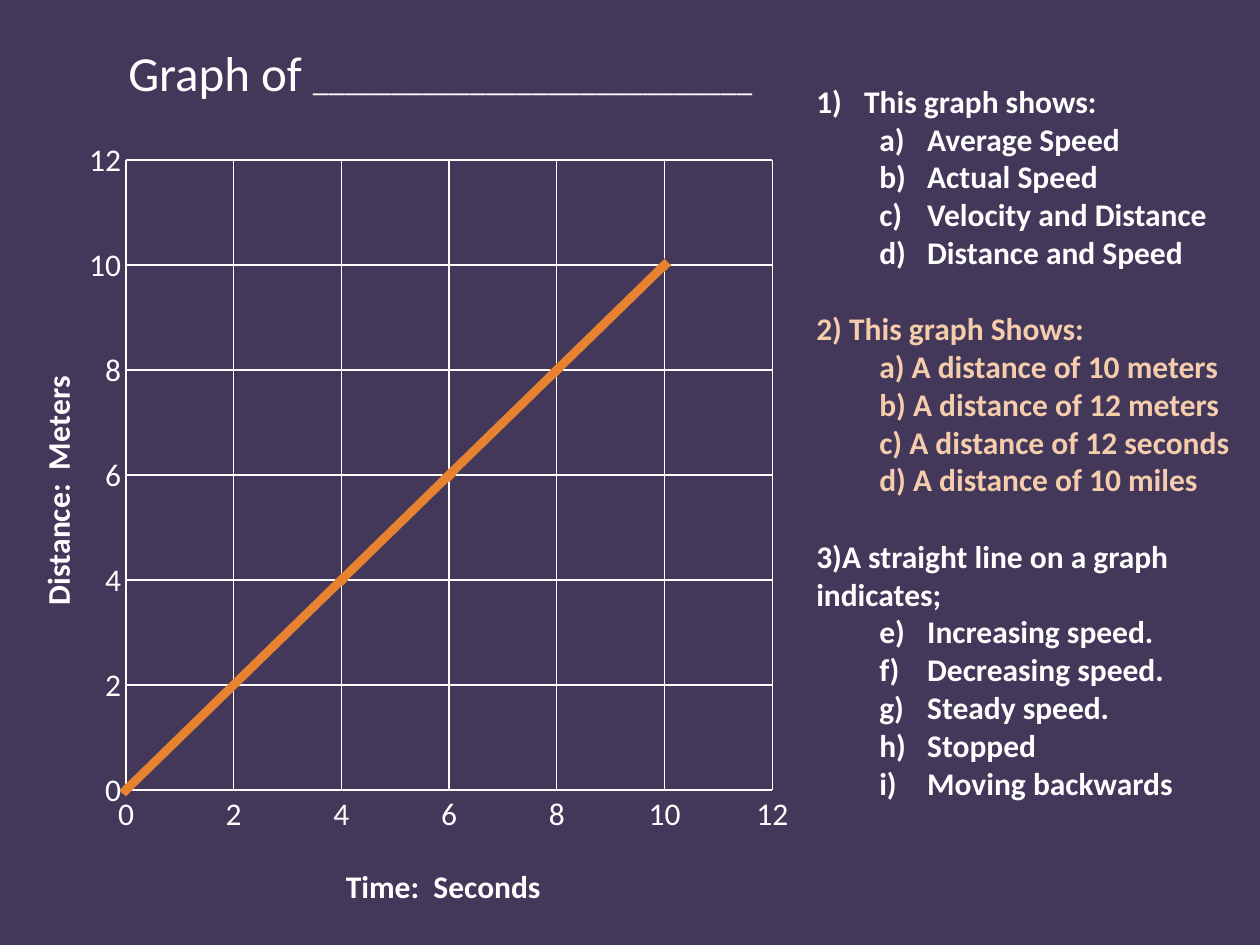
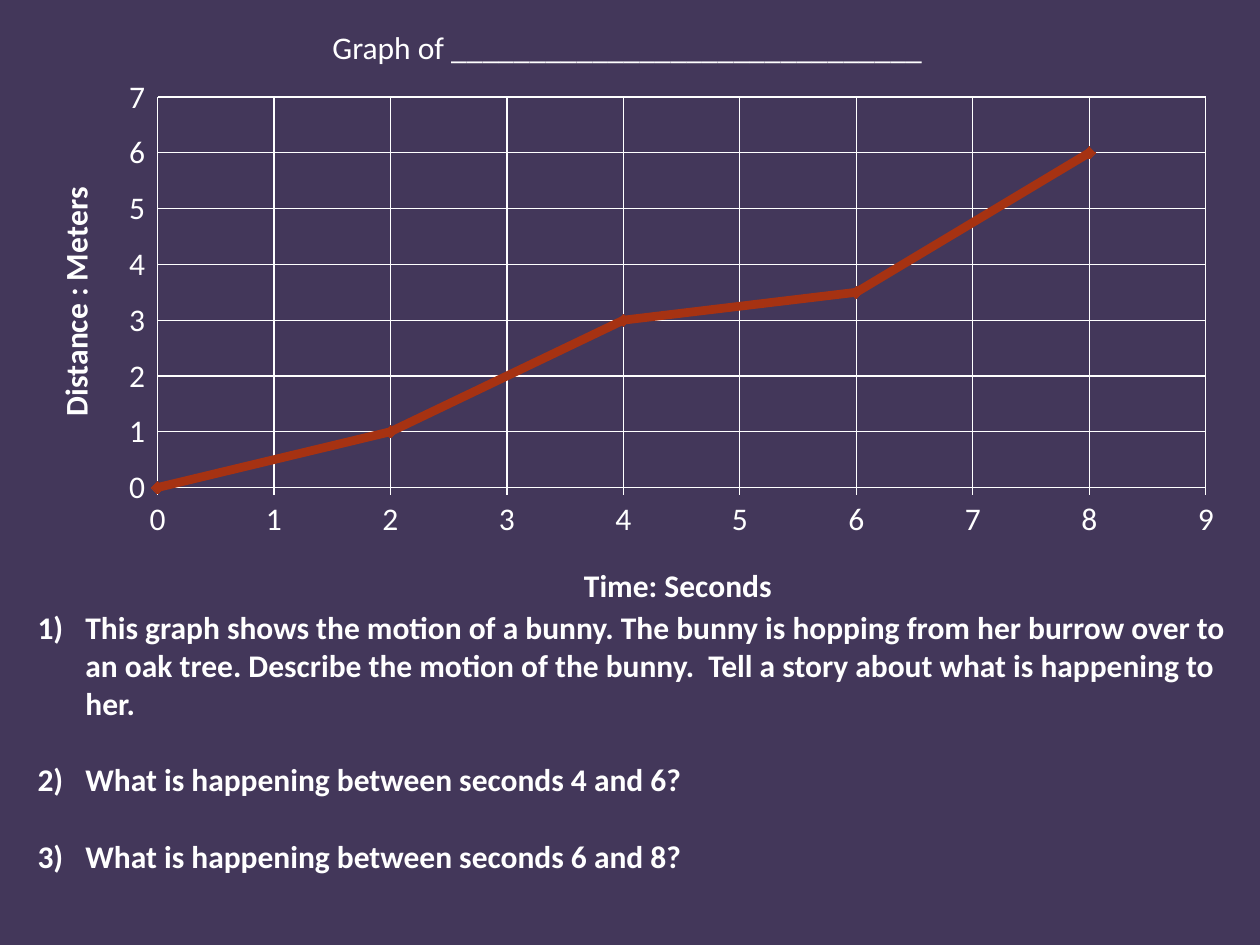
from lxml import etree
from pptx import Presentation
from pptx.chart.data import XyChartData
from pptx.dml.color import RGBColor
from pptx.enum.chart import XL_CHART_TYPE, XL_MARKER_STYLE, XL_TICK_MARK
from pptx.oxml.ns import qn
from pptx.util import Inches, Pt

BACKDROP = RGBColor(0x43, 0x37, 0x5A)
WHITE = RGBColor(0xFF, 0xFF, 0xFF)
ORANGE = RGBColor(0xE6, 0x82, 0x30)
PEACH = RGBColor(0xF5, 0xCD, 0xAC)
RUST = RGBColor(0xA6, 0x32, 0x12)
LINES = XL_CHART_TYPE.XY_SCATTER_LINES
SMOOTH = XL_CHART_TYPE.XY_SCATTER_SMOOTH
DIAMOND = XL_MARKER_STYLE.DIAMOND
TICK_NONE = XL_TICK_MARK.NONE
TICK_OUT = XL_TICK_MARK.OUTSIDE

FONT = "Calibri"
BODY = 18
LINE_GAP = 22
HANG = 0.38
STEP = 0.5


def new_slide(prs):
    s = prs.slides.add_slide(prs.slide_layouts[6])
    s.background.fill.solid()
    s.background.fill.fore_color.rgb = BACKDROP
    return s


def style_font(font, size=BODY, color=WHITE, bold=False):
    font.name = FONT
    font.size = Pt(size)
    font.bold = bold
    font.color.rgb = color


def add_box(s, box, wrap):
    tf = s.shapes.add_textbox(*map(Inches, box)).text_frame
    tf.word_wrap = wrap
    return tf


def add_heading(s, box, label, blanks, size):
    p = add_box(s, box, False).paragraphs[0]
    for text, points in ((label, size), ("_" * blanks, BODY)):
        r = p.add_run()
        r.text = text
        style_font(r.font, points)


def indent(p, level, scheme=None, start=1):
    hang = HANG if scheme else 0
    pPr = p._p.get_or_add_pPr()
    pPr.set("marL", str(Inches(level * STEP + hang)))
    pPr.set("indent", str(-Inches(hang)))
    if scheme:
        bullet = etree.SubElement(pPr, qn("a:buAutoNum"), type=scheme)
        if start > 1:
            bullet.set("startAt", str(start))


def add_line(tf, text, level=0, scheme=None, start=1, color=WHITE, gap=False):
    p = tf.paragraphs[0]
    if p.text:
        p = tf.add_paragraph()
    p.text = text
    p.level = level
    if gap:
        p.space_before = Pt(LINE_GAP)
    indent(p, level, scheme, start)
    style_font(p.runs[0].font, color=color, bold=True)


def add_options(tf, options, scheme=None, start=1, color=WHITE):
    for text in options:
        add_line(tf, text, 1, scheme, start, color)


def place(parent, index, frame, left, top, width=None, height=None):
    for old in parent.findall(qn("c:layout")):
        parent.remove(old)
    layout = etree.Element(qn("c:layout"))
    manual = etree.SubElement(layout, qn("c:manualLayout"))
    parts = [("xMode", "edge"), ("yMode", "edge"),
             ("x", (left - frame[0]) / frame[2]), ("y", (top - frame[1]) / frame[3])]
    if width:
        parts.insert(0, ("layoutTarget", "inner"))
        parts += [("w", width / frame[2]), ("h", height / frame[3])]
    for name, value in parts:
        etree.SubElement(manual, qn("c:" + name), val=str(value))
    parent.insert(index, layout)


def style_axis(axis, title, title_at, frame, top, unit, tick):
    axis.minimum_scale, axis.maximum_scale, axis.major_unit = 0, top, unit
    axis.major_tick_mark = tick
    axis.minor_tick_mark = TICK_NONE
    axis.has_major_gridlines = True
    for line in (axis.format.line, axis.major_gridlines.format.line):
        line.color.rgb = WHITE
        line.width = Pt(0.75)
    style_font(axis.tick_labels.font)
    tf = axis.axis_title.text_frame
    tf.text = title
    style_font(tf.paragraphs[0].runs[0].font, bold=True)
    place(axis.axis_title._element, 1, frame, *title_at)


def add_motion_graph(s, kind, frame, plot, points, color, x_axis, y_axis, tick):
    data = XyChartData(number_format="General")
    series = data.add_series("Series 1")
    for x, y in points:
        series.add_data_point(x, y)
    chart = s.shapes.add_chart(kind, *map(Inches, frame), data).chart
    chart.has_title = False
    chart.has_legend = False
    style_font(chart.font)
    chart.plots[0].vary_by_categories = False
    path_line = chart.plots[0].series[0]
    path_line.smooth = kind == SMOOTH
    path_line.format.line.color.rgb = color
    path_line.format.line.width = Pt(5)
    marker = path_line.marker
    marker.style, marker.size = DIAMOND, 7
    marker.format.fill.solid()
    marker.format.fill.fore_color.rgb = color
    marker.format.line.fill.background()
    style_axis(chart.category_axis, *x_axis[:2], frame, *x_axis[2:], tick)
    style_axis(chart.value_axis, *y_axis[:2], frame, *y_axis[2:], tick)
    body = chart.value_axis.axis_title.text_frame._txBody.bodyPr
    body.set("rot", "-5400000")
    body.set("vert", "horz")
    place(chart._chartSpace.chart.plotArea, 0, frame, *plot)
    return chart


def build_straight_line(prs):
    s = new_slide(prs)
    add_motion_graph(
        s, LINES, (0, 0.99, 6.38, 6.37), (1, 1.27, 5.13, 5),
        [(n, n) for n in (0, 4, 6, 8, 10)], ORANGE,
        ("Time:  Seconds", (2.7, 6.82), 12, 2),
        ("Distance:  Meters", (0.24, 2.94), 12, 2), TICK_NONE)
    tf = add_box(s, (6.38, 0.6, 3.62, 5.86), True)
    add_line(tf, "This graph shows:", scheme="arabicParenR")
    add_options(tf, ("Average Speed", "Actual Speed", "Velocity and Distance",
                     "Distance and Speed"), "alphaLcParenR")
    add_line(tf, "2) This graph Shows:", color=PEACH, gap=True)
    add_options(tf, ("a) A distance of 10 meters", "b) A distance of 12 meters",
                     "c) A distance of 12 seconds", "d) A distance of 10 miles"),
                color=PEACH)
    add_line(tf, "3)A straight line on a graph indicates;", gap=True)
    add_options(tf, ("Increasing speed.", "Decreasing speed.", "Steady speed.",
                     "Stopped", "Moving backwards"), "alphaLcParenR", 5)
    add_heading(s, (0.92, 0.29, 5.21, 0.57), "Graph of ", 28, 28)


def build_bunny(prs):
    s = new_slide(prs)
    chart = add_motion_graph(
        s, SMOOTH, (0.2, 0.52, 9.63, 4.44), (1.25, 0.77, 8.32, 3.1),
        [(0, 0), (2, 1), (4, 3), (6, 3.5), (8, 6)], RUST,
        ("Time: Seconds", (4.59, 4.43), 9, 1),
        ("Distance : Meters", (0.38, 1.44), 7, 1), TICK_OUT)
    chart.value_axis.format.line.fill.background()
    tf = add_box(s, (0.2, 4.78, 9.63, 2.22), True)
    questions = (
        "This graph shows the motion of a bunny. The bunny is hopping from her burrow "
        "over to an oak tree. Describe the motion of the bunny.  Tell a story about "
        "what is happening to her.",
        "What is happening between seconds 4 and 6?",
        "What is happening between seconds 6 and 8?")
    for i, question in enumerate(questions):
        add_line(tf, question, scheme="arabicParenR", gap=i > 0)
    add_heading(s, (2.54, 0.17, 4.93, 0.4), "Graph of ", 30, BODY)


def main():
    prs = Presentation()
    prs.slide_width, prs.slide_height = Inches(10), Inches(7.5)
    build_straight_line(prs)
    build_bunny(prs)
    prs.save("out.pptx")


if __name__ == "__main__":
    main()
